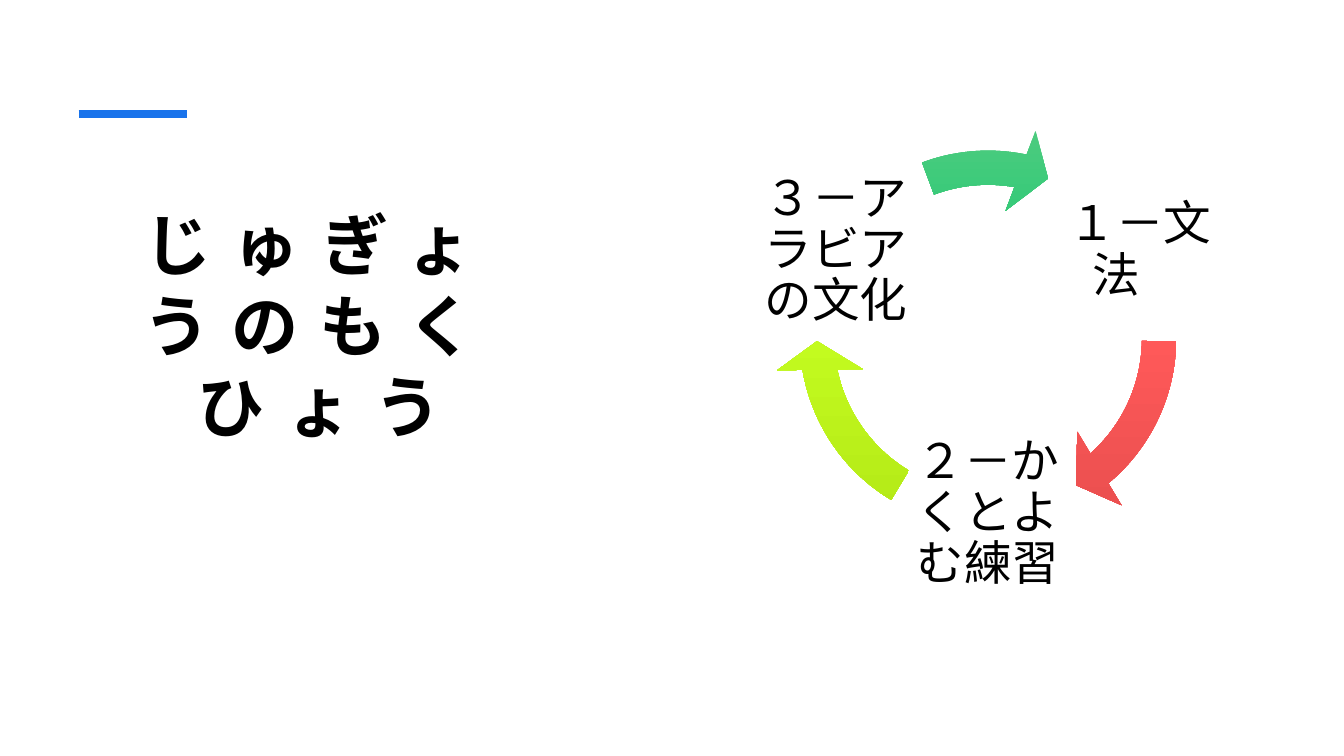
from copy import deepcopy
from math import cos, radians, sin

from lxml.etree import SubElement
from pptx import Presentation
from pptx.dml.color import RGBColor
from pptx.enum.shapes import MSO_CONNECTOR, MSO_SHAPE
from pptx.enum.text import MSO_ANCHOR, PP_ALIGN
from pptx.oxml.ns import qn
from pptx.util import Inches, Pt

BLUE = RGBColor(0x19, 0x73, 0xEB)
BLACK = RGBColor(0, 0, 0)
WHITE = RGBColor(255, 255, 255)
RED = [RGBColor(0xFF, 0x73, 0x73), RGBColor(0xFF, 0x59, 0x59), RGBColor(0xE5, 0x4D, 0x4D)]
LIME = [RGBColor(0xC6, 0xF5, 0x53), RGBColor(0xC3, 0xFB, 0x1F), RGBColor(0xB1, 0xE5, 0x15)]
GREEN = [RGBColor(0x4D, 0xCB, 0x7F), RGBColor(0x12, 0xC9, 0x6E), RGBColor(0x08, 0xBA, 0x62)]

# Label, angle of the label, arrow colours, arrow end and start adjustments
STEPS = [
    ("１－文法　", -30, RED, 29.64, 0.51),
    ("２－かくとよむ練習", 90, LIME, 101.73, 72.6),
    ("３－アラビアの文化", 210, GREEN, 168.57, 149.67),
]


def add_text(slide, box, text, frame_format, font_format, line_spacing=1.0):
    text_box = slide.shapes.add_textbox(*map(Inches, box))
    frame = text_box.text_frame
    frame.word_wrap = True
    for name, value in frame_format.items():
        setattr(frame, name, value)
    paragraph = frame.paragraphs[0]
    paragraph.alignment = PP_ALIGN.CENTER
    paragraph.line_spacing = line_spacing
    run = paragraph.add_run()
    run.text = text
    run.font.color.rgb = BLACK
    for name, value in {"name": "Lato", **font_format}.items():
        setattr(run.font, name, value)
    return run


def add_heading(slide, left, top, width, height):
    # Accent line above the title
    line_left, line_top = Inches(left - 0.23), Inches(top - 0.25)
    accent = slide.shapes.add_connector(
        MSO_CONNECTOR.STRAIGHT, line_left, line_top, line_left + Inches(1.07), line_top)
    accent.line.color.rgb = BLUE
    accent.line.width = Pt(6)
    SubElement(accent._element.spPr, qn("a:effectLst"))
    # Title with wide letter spacing
    run = add_text(slide, (left, top, width, height), "じゅぎょうのもくひょう",
                   {"vertical_anchor": MSO_ANCHOR.BOTTOM}, {"size": Pt(48), "bold": True})
    run.font._element.set("spc", "1500")


def add_arrow(slide, box, colors, end, start):
    arrow = slide.shapes.add_shape(MSO_SHAPE.CIRCULAR_ARROW, *map(Inches, box))
    arrow.shadow.inherit = False
    arrow.line.fill.background()
    for index, value in enumerate([0.08, 5.76, end, start, 0.1]):
        arrow.adjustments[index] = value
    # Three-stop gradient running downwards
    fill = arrow.fill
    fill.gradient()
    fill.gradient_angle = 270
    first_stop = arrow._element.spPr.find(".//" + qn("a:gs"))
    first_stop.addnext(deepcopy(first_stop))
    for stop, position, color in zip(fill.gradient_stops, [0, 0.5, 1], colors):
        stop.position = position
        stop.color.rgb = color


def add_cycle(slide, left, top, size):
    center_x, center_y = left + size / 2, top + size / 2
    radius, label_size = 1.74, 1.79
    margins = dict.fromkeys(
        ["margin_left", "margin_top", "margin_right", "margin_bottom"], Inches(0.05))
    for text, angle, colors, end, start in STEPS:
        label_left = center_x + radius * cos(radians(angle)) - label_size / 2
        label_top = center_y + radius * sin(radians(angle)) - label_size / 2
        add_text(slide, (label_left, label_top, label_size, label_size), text,
                 {"vertical_anchor": MSO_ANCHOR.MIDDLE, **margins}, {"size": Pt(34)}, 0.9)
        add_arrow(slide, (left, top, size, size), colors, end, start)


def main():
    presentation = Presentation()
    presentation.slide_width = Inches(13.33)
    presentation.slide_height = Inches(7.5)
    slide = presentation.slides.add_slide(presentation.slide_layouts[6])
    slide.background.fill.solid()
    slide.background.fill.fore_color.rgb = WHITE
    add_heading(slide, 1.01, 1.38, 4.32, 3.09)
    add_cycle(slide, 7.68, 1.24, 4.24)
    presentation.save("out.pptx")


if __name__ == "__main__":
    main()
